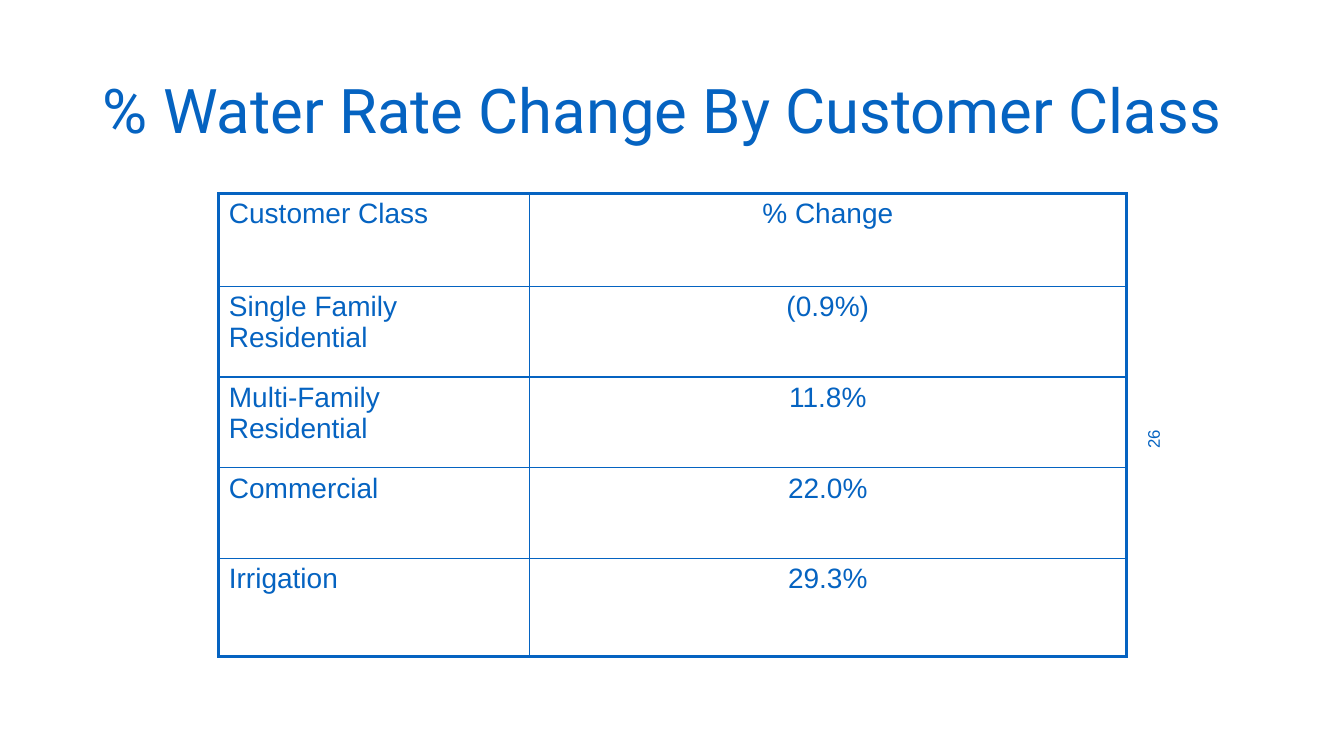
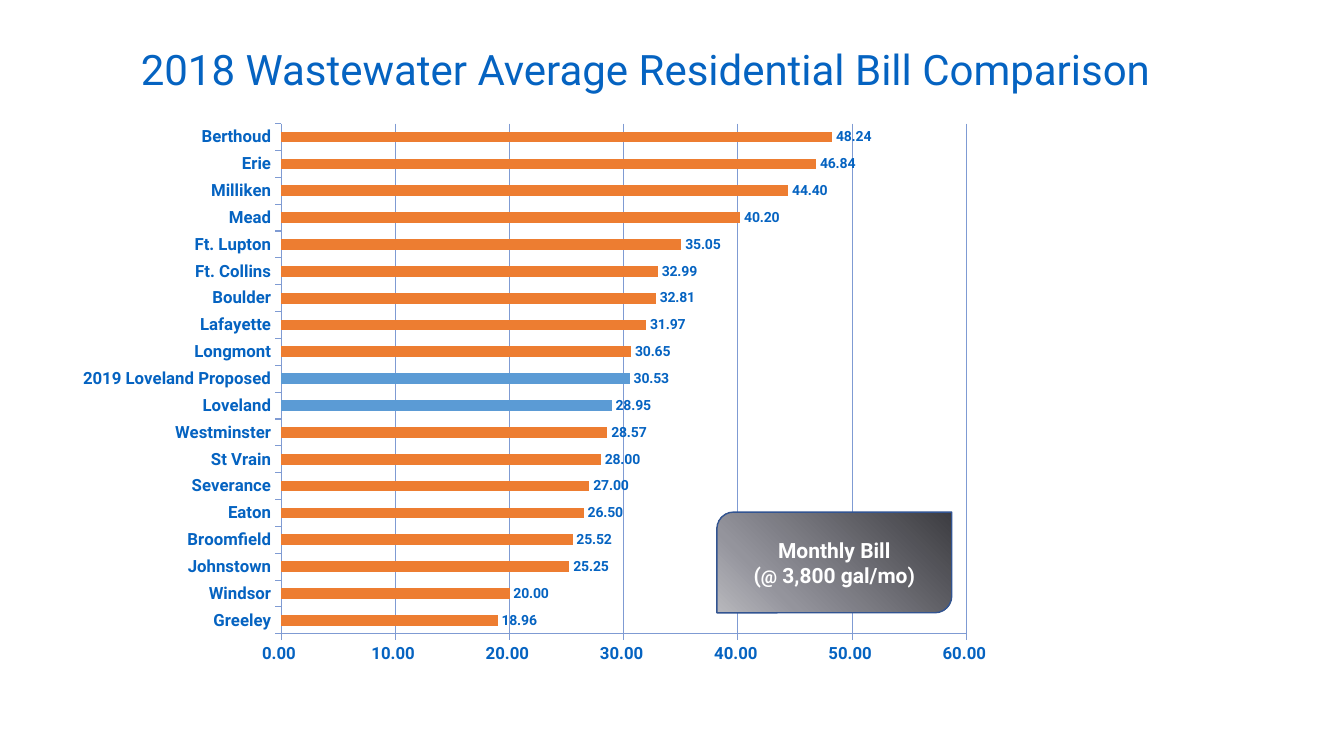
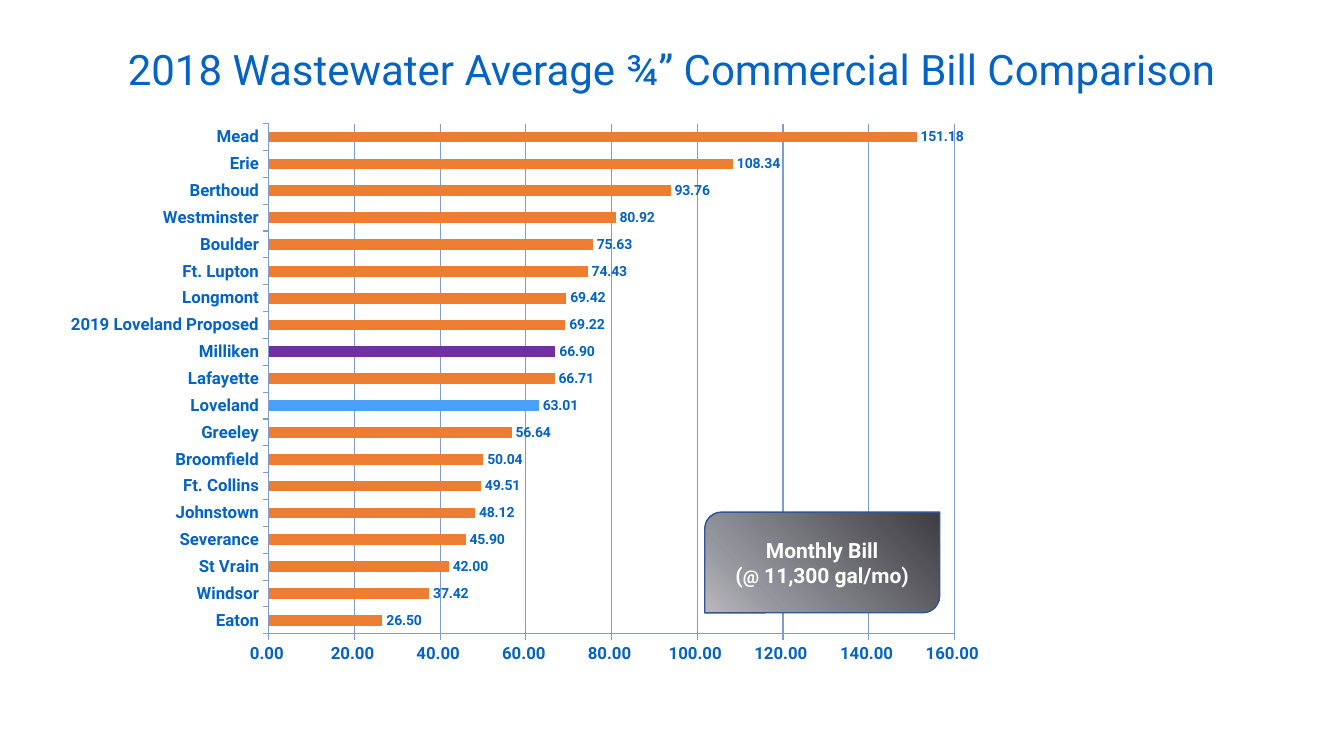
"""Build three slides on water rate changes and wastewater bill comparisons."""
import copy
import dataclasses

import pptx
import pptx.chart.data
import pptx.dml.color
import pptx.enum.chart
import pptx.enum.shapes
import pptx.enum.text
import pptx.oxml
import pptx.oxml.ns
import pptx.presentation
import pptx.slide
import pptx.text.text
import pptx.util

WIDTH, HEIGHT = 13.33, 7.5
BLUE, ORANGE, GRID, WHITE = "0563C1", "ED7D31", "7F9BD3", "FFFFFF"
GRADIENT = ((0, "3C3C41"), (75, "94949C"), (100, "B8B8BD"))
HEADING_FONT, TABLE_FONT = "Roboto", "Arial"
NUMBER_FORMAT = r"#,##0.00_);[Red]\(#,##0.00\)"
PLOT_SHARES = {"x": 0.233, "y": 0.028, "w": 0.721, "h": 0.904}
ALIGN = pptx.enum.text.PP_ALIGN
ANCHOR = pptx.enum.text.MSO_ANCHOR
qn = pptx.oxml.ns.qn


@dataclasses.dataclass(frozen=True)
class Box:
    """A place on the slide in percent of its width and height."""

    left: float
    top: float
    width: float
    height: float

    def emu(self) -> tuple[int, int, int, int]:
        """Return the four lengths in EMU."""
        return across(self.left), down(self.top), across(self.width), down(self.height)


@dataclasses.dataclass(frozen=True)
class BillSlide:
    """The content of one bill comparison slide."""

    title: str
    title_box: Box
    chart_left: float
    maximum: int
    step: int
    usage: str
    bills: dict[str, float]
    highlights: dict[str, str]


RATES = (
    ("Customer Class", "% Change"),
    ("Single Family Residential", "(0.9%)"),
    ("Multi-Family Residential", "11.8%"),
    ("Commercial", "22.0%"),
    ("Irrigation", "29.3%"),
)
RATE_COLUMNS = (23.11, 44.41)
RATE_ROWS = (12.27, 12, 12, 12, 12.93)

BILL_SLIDES = (
    BillSlide(
        "2018 Wastewater Average Residential Bill Comparison",
        Box(4.43, 2.27, 87.25, 14.4), 4.43, 60, 10, "3,800",
        {
            "Greeley": 18.96, "Windsor": 20, "Johnstown": 25.25,
            "Broomfield": 25.52, "Eaton": 26.5, "Severance": 27,
            "St Vrain": 28, "Westminster": 28.57, "Loveland": 28.95,
            "2019 Loveland Proposed": 30.53, "Longmont": 30.65,
            "Lafayette": 31.97, "Boulder": 32.81, "Ft. Collins": 32.99,
            "Ft. Lupton": 35.05, "Mead": 40.2, "Milliken": 44.4,
            "Erie": 46.84, "Berthoud": 48.24,
        },
        {"Loveland": "5B9BD5", "2019 Loveland Proposed": "5B9BD5"},
    ),
    BillSlide(
        "2018 Wastewater Average ¾” Commercial Bill Comparison",
        Box(5.55, 2.27, 88.9, 14.4), 3.53, 160, 20, "11,300",
        {
            "Eaton": 26.5, "Windsor": 37.42, "St Vrain": 42,
            "Severance": 45.9, "Johnstown": 48.12, "Ft. Collins": 49.51,
            "Broomfield": 50.04, "Greeley": 56.64, "Loveland": 63.01,
            "Lafayette": 66.71, "Milliken": 66.9,
            "2019 Loveland Proposed": 69.22, "Longmont": 69.42,
            "Ft. Lupton": 74.43, "Boulder": 75.63, "Westminster": 80.92,
            "Berthoud": 93.76, "Erie": 108.34, "Mead": 151.18,
        },
        {"Loveland": "49A1FA", "Milliken": "7030A0"},
    ),
)


def across(percent: float) -> int:
    """Turn a percentage of the slide width into EMU."""
    return pptx.util.Inches(WIDTH * percent / 100)


def down(percent: float) -> int:
    """Turn a percentage of the slide height into EMU."""
    return pptx.util.Inches(HEIGHT * percent / 100)


def rgb(value: str) -> pptx.dml.color.RGBColor:
    """Turn a hex string into a colour."""
    return pptx.dml.color.RGBColor.from_string(value)


def style_font(font: pptx.text.text.Font, *, size: float, color: str = BLUE,
               name: str = HEADING_FONT, bold: bool = False) -> None:
    """Set the face, size, weight and colour of a font."""
    font.name, font.size, font.bold = name, pptx.util.Pt(size), bold
    font.color.rgb = rgb(color)


def write(p: pptx.text.text._Paragraph, text: str, *,
          align: ALIGN = ALIGN.LEFT, **font: object) -> None:
    """Append a formatted run to a paragraph."""
    p.alignment = align
    r = p.add_run()
    r.text = text
    style_font(r.font, **font)


def add_titled_slide(prs: pptx.presentation.Presentation, title: str, box: Box, *,
                     size: float, align: ALIGN) -> pptx.slide.Slide:
    """Add a slide with a formatted title."""
    s = prs.slides.add_slide(prs.slide_layouts[5])
    sp = s.shapes.title
    sp.left, sp.top, sp.width, sp.height = box.emu()
    tf = sp.text_frame
    tf.auto_size = pptx.enum.text.MSO_AUTO_SIZE.NONE
    tf.vertical_anchor = ANCHOR.MIDDLE
    tf.paragraphs[0].line_spacing = 0.9
    write(tf.paragraphs[0], title, size=size, align=align)
    return s


def set_borders(cell: pptx.table._Cell, widths: dict[str, float]) -> None:
    """Draw the sides of a table cell, given in schema order."""
    tc_pr = cell._tc.get_or_add_tcPr()
    for i, (side, points) in enumerate(widths.items()):
        tc_pr.insert(i, pptx.oxml.parse_xml(
            f'<a:ln{side} {pptx.oxml.ns.nsdecls("a")} w="{pptx.util.Pt(points)}">'
            f'<a:solidFill><a:srgbClr val="{BLUE}"/></a:solidFill></a:ln{side}>'))


def add_rate_table(s: pptx.slide.Slide) -> None:
    """Add the table of rate changes."""
    box = Box(16.28, 25.6, sum(RATE_COLUMNS), sum(RATE_ROWS))
    last_row, last_column = len(RATE_ROWS) - 1, len(RATE_COLUMNS) - 1
    table = s.shapes.add_table(len(RATE_ROWS), len(RATE_COLUMNS), *box.emu()).table
    table.first_row = table.horz_banding = False
    for column, width in zip(table.columns, RATE_COLUMNS):
        column.width = across(width)
    for i, (height, texts) in enumerate(zip(RATE_ROWS, RATES)):
        table.rows[i].height = down(height)
        for j, text in enumerate(texts):
            cell = table.cell(i, j)
            cell.fill.background()
            outer = {"L": j == 0, "R": j == last_column, "T": i == 0, "B": i == last_row}
            set_borders(cell, {k: 2.25 if edge else 1 for k, edge in outer.items()})
            write(cell.text_frame.paragraphs[0], text, size=20, name=TABLE_FONT,
                  align=ALIGN.CENTER if j else ALIGN.LEFT)


def add_page_number(s: pptx.slide.Slide, number: str) -> None:
    """Add the page number, turned to read upwards."""
    sp = s.shapes.add_textbox(*Box(84.1, 56.13, 3.15, 4.4).emu())
    sp.rotation = 270
    tf = sp.text_frame
    tf.word_wrap = True
    tf.vertical_anchor = ANCHOR.BOTTOM
    write(tf.paragraphs[0], number, size=12, name=TABLE_FONT, align=ALIGN.RIGHT)


def place_plot(chart: pptx.chart.chart.Chart) -> None:
    """Fix the inner plot area of a chart."""
    area = chart.element.find(".//" + qn("c:plotArea"))
    for old in area.findall(qn("c:layout")):
        area.remove(old)
    modes = "".join(f'<c:{k}Mode val="edge"/>' for k in "xy")
    shares = "".join(f'<c:{k} val="{v}"/>' for k, v in PLOT_SHARES.items())
    area.insert(0, pptx.oxml.parse_xml(
        f'<c:layout {pptx.oxml.ns.nsdecls("c")}><c:manualLayout>'
        f'<c:layoutTarget val="inner"/>{modes}{shares}</c:manualLayout></c:layout>'))


def add_bill_chart(s: pptx.slide.Slide, bill: BillSlide) -> None:
    """Add the bar chart of monthly bills."""
    data = pptx.chart.data.CategoryChartData()
    data.categories = list(bill.bills)
    data.add_series("Series 1", list(bill.bills.values()))
    chart = s.shapes.add_chart(
        pptx.enum.chart.XL_CHART_TYPE.BAR_CLUSTERED,
        *Box(bill.chart_left, 14.27, 70.74, 74.67).emu(), data).chart
    chart.has_title = chart.has_legend = False
    style_font(chart.font, size=10)
    place_plot(chart)
    value_axis = chart.value_axis
    value_axis.minimum_scale, value_axis.maximum_scale = 0, bill.maximum
    value_axis.major_unit = bill.step
    value_axis.has_major_gridlines = True
    value_axis.tick_labels.number_format = NUMBER_FORMAT
    value_axis.tick_labels.number_format_is_linked = False
    for axis in (chart.category_axis, value_axis):
        axis.major_tick_mark = pptx.enum.chart.XL_TICK_MARK.OUTSIDE
        style_font(axis.tick_labels.font, size=12, bold=True)
    for line in (chart.category_axis.format.line, value_axis.format.line,
                 value_axis.major_gridlines.format.line):
        line.color.rgb, line.width = rgb(GRID), pptx.util.Pt(0.75)
    plot = chart.plots[0]
    plot.gap_width, plot.vary_by_categories = 150, False
    series = plot.series[0]
    series.format.fill.solid()
    series.format.fill.fore_color.rgb = rgb(ORANGE)
    for i, town in enumerate(bill.bills):
        if town in bill.highlights:
            fill = series.points[i].format.fill
            fill.solid()
            fill.fore_color.rgb = rgb(bill.highlights[town])
    labels = series.data_labels
    labels.show_value = True
    labels.number_format, labels.number_format_is_linked = NUMBER_FORMAT, False
    labels.position = pptx.enum.chart.XL_LABEL_POSITION.OUTSIDE_END
    style_font(labels.font, size=10, bold=True)


def fill_gradient(sp: pptx.shapes.autoshape.Shape) -> None:
    """Fill a shape from dark at top right to light at bottom left."""
    sp.fill.gradient()
    sp.fill.gradient_angle = 225
    stops = sp._element.spPr.find(".//" + qn("a:gsLst"))
    stops.append(copy.deepcopy(stops[0]))
    for stop, (position, color) in zip(sp.fill.gradient_stops, GRADIENT):
        stop.position, stop.color.rgb = position / 100, rgb(color)


def add_usage_callout(s: pptx.slide.Slide, bill: BillSlide) -> None:
    """Add the callout naming the monthly usage."""
    sp = s.shapes.add_shape(pptx.enum.shapes.MSO_SHAPE.ROUND_2_DIAG_RECTANGLE,
                            *Box(bill.chart_left + 48.91, 67.73, 17.48, 13.33).emu())
    sp.shadow.inherit = False
    fill_gradient(sp)
    sp.line.color.rgb, sp.line.width = rgb("325491"), pptx.util.Pt(1)
    tf = sp.text_frame
    tf.margin_left = tf.margin_right = 0
    tf.vertical_anchor = ANCHOR.MIDDLE
    lines = ((("Monthly Bill", 15),),
             (("(", 15), ("@", 13), (f" {bill.usage} gal/mo)", 15)))
    for i, runs in enumerate(lines):
        p = tf.add_paragraph() if i else tf.paragraphs[0]
        for text, size in runs:
            write(p, text, size=size, color=WHITE, bold=True, align=ALIGN.CENTER)


def main() -> None:
    """Build and save the presentation."""
    prs = pptx.Presentation()
    prs.slide_width, prs.slide_height = across(100), down(100)
    s = add_titled_slide(prs, "% Water Rate Change By Customer Class",
                         Box(6.9, 5.33, 86.27, 19.33), size=44, align=ALIGN.LEFT)
    add_rate_table(s)
    add_page_number(s, "26")
    for bill in BILL_SLIDES:
        s = add_titled_slide(prs, bill.title, bill.title_box, size=30, align=ALIGN.CENTER)
        add_bill_chart(s, bill)
        add_usage_callout(s, bill)
    prs.save("out.pptx")


if __name__ == "__main__":
    main()
